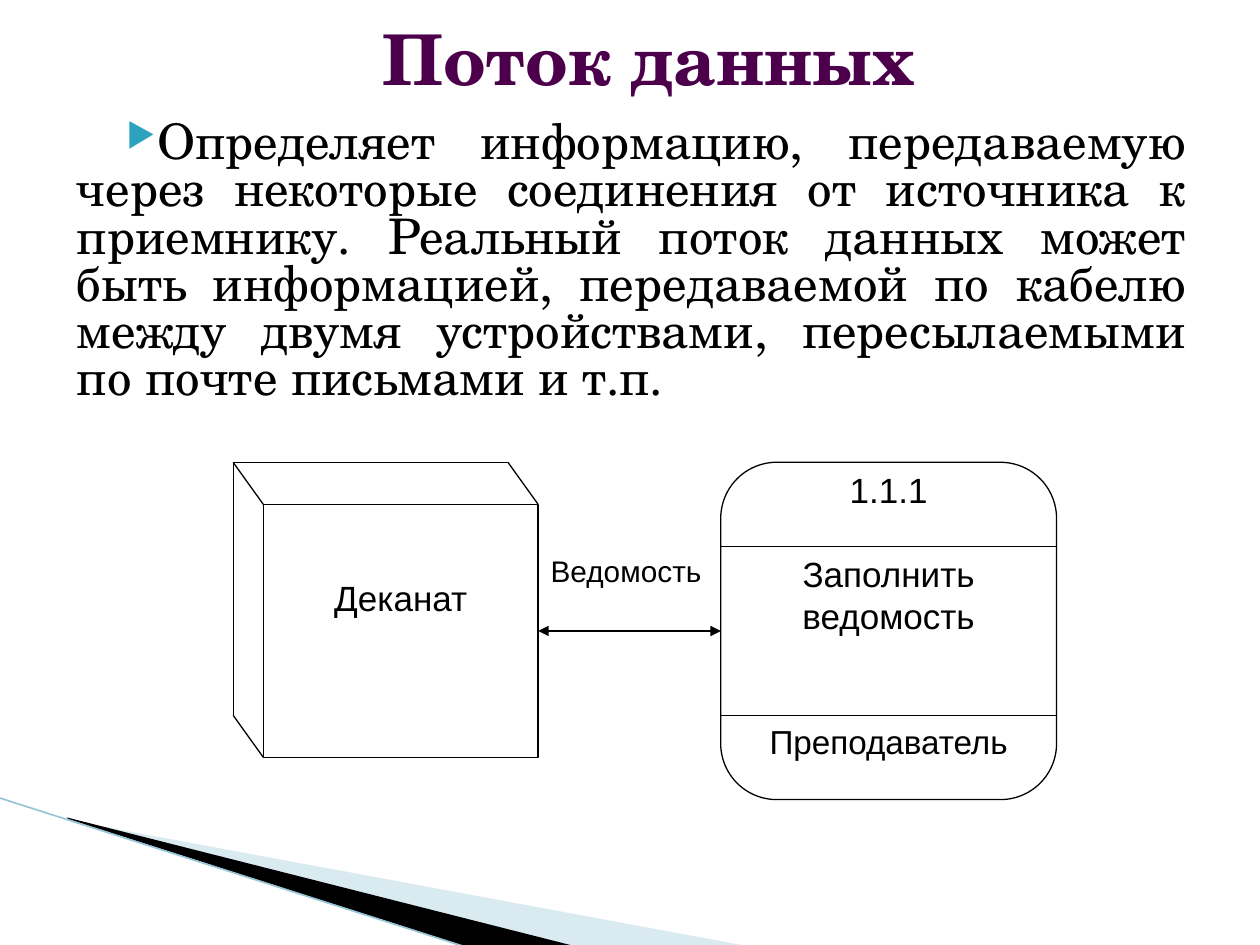
from lxml import etree
from pptx import Presentation
from pptx.dml.color import RGBColor
from pptx.enum.shapes import MSO_CONNECTOR, MSO_SHAPE
from pptx.enum.text import MSO_ANCHOR, PP_ALIGN
from pptx.oxml.ns import qn
from pptx.util import Cm, Pt

STRAIGHT = MSO_CONNECTOR.STRAIGHT
RECTANGLE, ROUNDED = MSO_SHAPE.RECTANGLE, MSO_SHAPE.ROUNDED_RECTANGLE
TOP, MIDDLE = MSO_ANCHOR.TOP, MSO_ANCHOR.MIDDLE
LEFT, CENTER, JUSTIFY = PP_ALIGN.LEFT, PP_ALIGN.CENTER, PP_ALIGN.JUSTIFY
LEFT_SIDE, RIGHT_SIDE = 1, 3

BLACK = RGBColor(0x00, 0x00, 0x00)
WHITE = RGBColor(0xFF, 0xFF, 0xFF)
PURPLE = RGBColor(0x4C, 0x00, 0x4C)
TEAL = RGBColor(0x2D, 0xA2, 0xBF)
PALE_BLUE = RGBColor(0xA0, 0xCB, 0xDC)
EDGE_BLUE = RGBColor(0x97, 0xC5, 0xD8)


class FlowSlide:
    serif = "TeX Gyre Schola"
    sans = "Arial"
    outline = 0.75

    def __init__(self, slide):
        self.shapes = slide.shapes

    def add_text(self, shape, text, size, font=None, color=BLACK, bold=False,
                 align=CENTER, anchor=TOP):
        frame = shape.text_frame
        frame.word_wrap = True
        frame.vertical_anchor = anchor
        paragraph = frame.paragraphs[0]
        paragraph.alignment = align
        run = paragraph.add_run()
        run.text = text
        run.font.name = font or self.sans
        run.font.size = Pt(size)
        run.font.bold = bold
        run.font.color.rgb = color
        return paragraph

    def label(self, left, top, width, height, text, size, **style):
        box = self.shapes.add_textbox(Cm(left), Cm(top), Cm(width), Cm(height))
        return self.add_text(box, text, size, **style)

    def bullet(self, paragraph, char, color, percent, indent):
        properties = paragraph._p.get_or_add_pPr()
        properties.set("marL", "0")
        properties.set("indent", str(Cm(indent)))
        tint = etree.SubElement(properties, qn("a:buClr"))
        etree.SubElement(tint, qn("a:srgbClr"), val=str(color))
        etree.SubElement(properties, qn("a:buSzPct"), val=str(percent * 1000))
        etree.SubElement(properties, qn("a:buChar"), char=char)

    def block(self, kind, left, top, width, height):
        shape = self.shapes.add_shape(kind, Cm(left), Cm(top), Cm(width), Cm(height))
        shape.shadow.inherit = False
        shape.fill.solid()
        shape.fill.fore_color.rgb = WHITE
        shape.line.color.rgb = BLACK
        shape.line.width = Pt(self.outline)
        return shape

    def line(self, start, end, color=BLACK, width=outline):
        connector = self.shapes.add_connector(STRAIGHT, *map(Cm, start + end))
        connector.line.color.rgb = color
        connector.line.width = Pt(width)
        etree.SubElement(connector._element.spPr, qn("a:effectLst"))
        return connector

    def two_way_arrow(self, source, target, start, end):
        arrow = self.line(start, end, width=1)
        arrow.begin_connect(source, RIGHT_SIDE)
        arrow.end_connect(target, LEFT_SIDE)
        stroke = arrow.line._get_or_add_ln()
        for tip in ("a:headEnd", "a:tailEnd"):
            etree.SubElement(stroke, qn(tip), type="triangle")

    def wedge(self, points, color, opacity=100):
        corners = [(Cm(x), Cm(y)) for x, y in points]
        builder = self.shapes.build_freeform(*corners[0])
        builder.add_line_segments(corners[1:])
        shape = builder.convert_to_shape()
        shape.shadow.inherit = False
        shape.fill.solid()
        shape.fill.fore_color.rgb = color
        shape.line.fill.background()
        if opacity < 100:
            tint = shape._element.spPr.find(qn("a:solidFill"))[0]
            etree.SubElement(tint, qn("a:alpha"), val=str(opacity * 1000))


def main():
    deck = Presentation()
    deck.slide_width, deck.slide_height = Cm(25.4), Cm(19.05)
    page = FlowSlide(deck.slides.add_slide(deck.slide_layouts[6]))

    page.wedge([(1.4, 16.54), (15.11, 19.08), (11.58, 19.08), (1.4, 16.51)],
               PALE_BLUE, 40)
    page.wedge([(1.35, 16.48), (11.61, 19.08), (9.45, 19.1), (1.37, 16.51)], BLACK)
    page.line((-0.03, 16.08), (9.42, 19.1), EDGE_BLUE, 0.95)

    definition = page.label(
        1.3, 2.34, 22.86, 6,
        "Определяет информацию, передаваемую через некоторые соединения "
        "от источника к приемнику. Реальный поток данных может быть "
        "информацией, передаваемой по кабелю между двумя устройствами, "
        "пересылаемыми по почте письмами и т.п.",
        28, font=page.serif, align=JUSTIFY)
    page.bullet(definition, "▶", TEAL, 68, 1)
    definition.line_spacing = 0.8
    page.label(1.65, 0.13, 22.86, 2.06, "Поток данных", 40, font=page.serif,
               color=PURPLE, bold=True, anchor=MIDDLE)

    step = 1.7
    top = 9.32
    header_end, middle, footer_start = (top + step * n for n in (1, 2, 3))

    process_left, process_width = 14.53, 6.77
    process_right = process_left + process_width
    process = page.block(ROUNDED, process_left, top, process_width, 4 * step)
    process.adjustments[0] = 0.167
    for divider in (header_end, footer_start):
        page.line((process_left, divider), (process_right, divider))

    depth_x, depth_y = 0.61, step / 2
    back_left, face_width, face_height = 4.7, 5.54, 3 * step
    back_right, back_bottom = back_left + face_width, top + face_height
    face_left, face_top = back_left + depth_x, top + depth_y
    face_right = face_left + face_width
    dean = page.block(RECTANGLE, face_left, face_top, face_width, face_height)
    page.add_text(dean, "Деканат", 20)
    dean.text_frame.margin_top = Cm(1.45)

    back_corner = (back_left, top)
    for x, y in ((back_left, top), (back_left, back_bottom), (back_right, top)):
        page.line((x, y), (x + depth_x, y + depth_y))
    for corner in ((back_right, top), (back_left, back_bottom)):
        page.line(back_corner, corner)

    caption_width = 5.54
    caption_left = process_left + (process_width - caption_width) / 2
    for caption_top, rows, text, size in (
            (header_end, 2, "Заполнить ведомость", 20),
            (footer_start, 1, "Преподаватель", 19),
            (top, 1, "1.1.1", 20)):
        page.label(caption_left, caption_top, caption_width, rows * step, text, size)

    page.two_way_arrow(dean, process, (face_right, middle), (process_left, middle))
    page.label(face_right, header_end, process_left - face_right, step,
               "Ведомость", 17, align=LEFT)

    deck.save("out.pptx")


if __name__ == "__main__":
    main()
